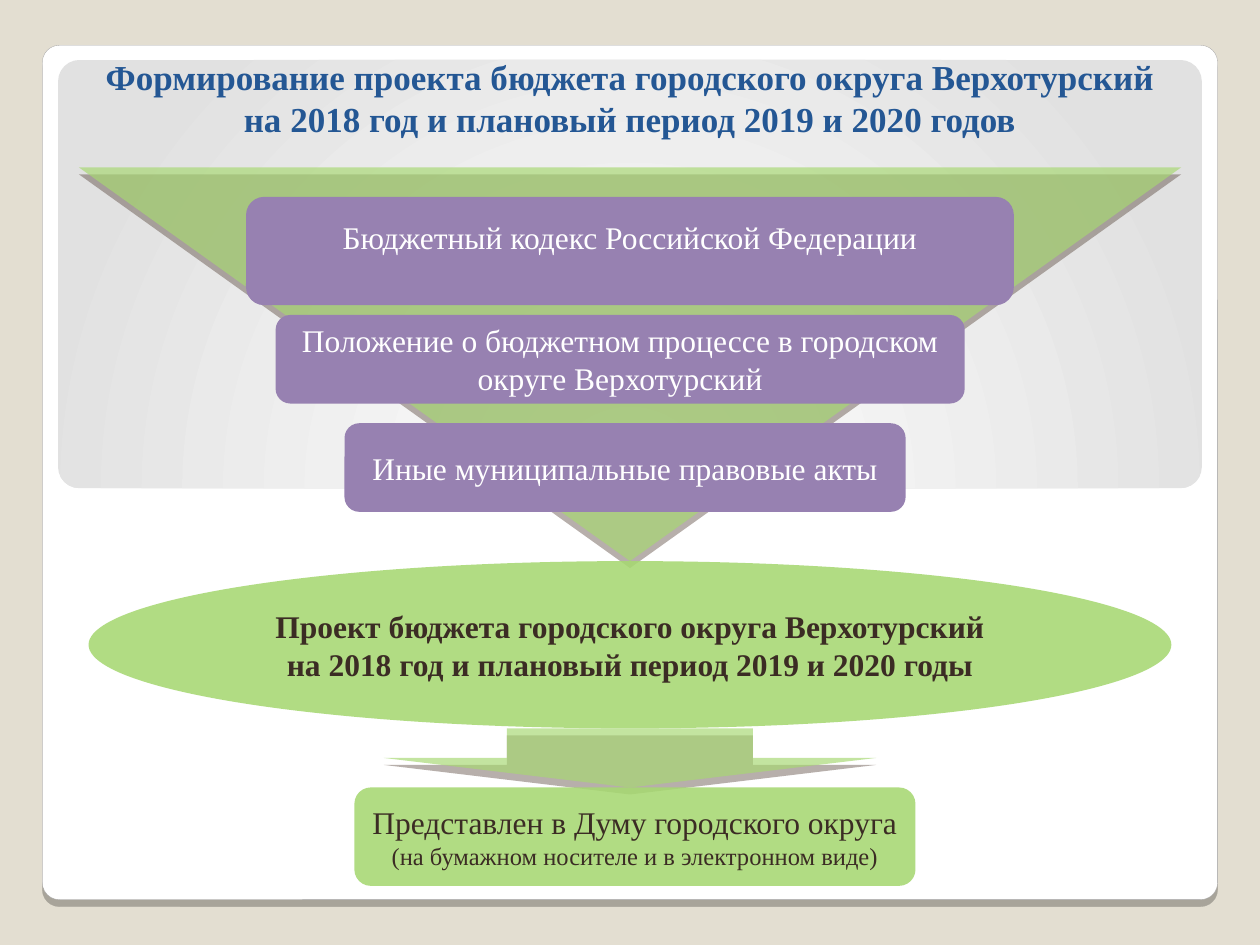
from typing import NamedTuple

from pptx import Presentation
from pptx.dml.color import RGBColor
from pptx.enum.shapes import MSO_SHAPE as Shape
from pptx.enum.text import MSO_ANCHOR as Anchor, PP_ALIGN as Align
from pptx.oxml import parse_xml
from pptx.oxml.ns import nsdecls, qn
from pptx.util import Inches, Pt

CELL = Inches(10) / 128
FONT = "Times New Roman"
GREEN, PURPLE, BROWN, BLUE, WHITE = "A7D872", "9781B1", "3B2C24", "245794", "FFFFFF"


class Box(NamedTuple):
    """Area on a grid of 128 columns by 96 rows."""
    left: float
    top: float
    width: float
    height: float

    def inside(self, left, top, width, height):
        """Return the box at an offset within this one."""
        return Box(self.left + left, self.top + top, width, height)

    def lengths(self):
        """Return the four lengths in slide units."""
        return [round(value * CELL) for value in self]


def colour(code):
    """Turn a hex string into a colour."""
    return RGBColor.from_string(code)


def add_shape(page, kind, box, fill=None, opacity=100, shadow=None, adjust=()):
    """Add a preset shape; shadow is a colour and its opacity."""
    shape = page.shapes.add_shape(kind, *box.lengths())
    shape.shadow.inherit = False
    shape.line.fill.background()
    for index, value in enumerate(adjust):
        shape.adjustments[index] = value
    properties = shape._element.spPr
    if fill:
        shape.fill.solid()
        shape.fill.fore_color.rgb = colour(fill)
        shade = properties.find(qn("a:solidFill"))[0]
        shade.append(parse_xml(f'<a:alpha {nsdecls("a")} val="{opacity * 1000}"/>'))
    if shadow:
        tint, strength = shadow
        properties.find(qn("a:effectLst")).append(parse_xml(
            f'<a:outerShdw {nsdecls("a")} blurRad="0" dist="{Pt(4)}" dir="5400000" '
            f'algn="tl" rotWithShape="0"><a:srgbClr val="{tint}">'
            f'<a:alpha val="{strength * 1000}"/></a:srgbClr></a:outerShdw>'))
    return shape


def write(shape, lines, sizes, code, bold=False, anchor=Anchor.MIDDLE):
    """Fill a shape with centred lines of text."""
    frame = shape.text_frame
    frame.word_wrap = True
    frame.vertical_anchor = anchor
    frame.margin_left = frame.margin_right = Inches(0.05)
    frame.text = "\n".join(lines)
    for para, size in zip(frame.paragraphs, sizes):
        para.alignment = Align.CENTER
        for span in para.runs:
            span.font.name, span.font.size, span.font.bold = FONT, Pt(size), bold
            span.font.color.rgb = colour(code)
    return frame


def add_backdrop(page, box):
    """Draw the white sheet and its shaded upper panel."""
    page.background.fill.solid()
    page.background.fill.fore_color.rgb = colour("E3DED1")
    sheet = add_shape(page, Shape.ROUNDED_RECTANGLE, box, WHITE,
                      shadow=("000000", 25), adjust=[0.02])
    sheet.line.color.rgb = colour("A4A3A3")
    sheet.line.width = Pt(0.16)
    panel = add_shape(page, Shape.ROUNDED_RECTANGLE,
                      box.inside(1.6, 1.5, box.width - 3.2, 43.5), adjust=[0.05])
    panel._element.spPr.find(qn("a:prstGeom")).addnext(parse_xml(
        f'<a:gradFill {nsdecls("a")} rotWithShape="1"><a:gsLst>'
        '<a:gs pos="0"><a:srgbClr val="FFFFFF"/></a:gs>'
        '<a:gs pos="100000"><a:srgbClr val="E1E1E1"/></a:gs></a:gsLst>'
        '<a:path path="circle"><a:fillToRect l="50000" t="175000" r="50000" b="-75000"/>'
        '</a:path></a:gradFill>'))


def add_funnel(page, box):
    """Draw the funnel and the legal acts stacked on it."""
    add_shape(page, Shape.FLOWCHART_MERGE, box, GREEN, 67, ("4E3B30", 60))
    acts = [
        ((17, 3, 78, 11), ["Бюджетный кодекс Российской Федерации"], 0.27),
        ((20, 15, 70, 9), ["Положение о бюджетном процессе в городском",
                           "округе Верхотурский"], 0.05),
        ((27, 26, 57, 9), ["Иные муниципальные правовые акты"], 0.05),
    ]
    for area, lines, bottom in acts:
        card = add_shape(page, Shape.ROUNDED_RECTANGLE, box.inside(*area), PURPLE)
        frame = write(card, lines, [18, 18], WHITE)
        frame.margin_bottom = Inches(bottom)


def add_result(page, box):
    """Draw the ellipse naming the draft budget."""
    add_shape(page, Shape.OVAL, box, GREEN, 88)
    area = box.inside(3, 0, box.width - 6, box.height)
    write(page.shapes.add_textbox(*area.lengths()),
          ["Проект бюджета городского округа Верхотурский",
           "на 2018 год и плановый период 2019 и 2020 годы"], [18, 18], BROWN, True)


def add_submission(page, box):
    """Draw the arrow and the card on submission to the Duma."""
    add_shape(page, Shape.DOWN_ARROW, box.inside(3, 0, 50, 6), GREEN, 67,
              ("4E3B30", 60), [0.5, 0.5])
    card = add_shape(page, Shape.ROUNDED_RECTANGLE,
                     box.inside(0, 6, box.width, 10), GREEN, 88)
    write(card, ["Представлен в Думу городского округа",
                 "(на бумажном носителе и в электронном виде)"], [18, 14], BROWN)


def add_title(page, box):
    """Write the two-line title."""
    write(page.shapes.add_textbox(*box.lengths()),
          ["Формирование проекта бюджета городского округа Верхотурский",
           "на 2018 год и плановый период 2019 и 2020 годов"],
          [20, 20], BLUE, True, Anchor.TOP)


def main():
    """Build and save the slide."""
    deck = Presentation()
    deck.slide_width, deck.slide_height = Inches(10), Inches(7.5)
    page = deck.slides.add_slide(deck.slide_layouts[6])
    add_backdrop(page, Box(4.3, 4.6, 119.4, 86.8))
    add_funnel(page, Box(8, 17, 112, 40))
    add_result(page, Box(9, 57, 110, 17))
    add_submission(page, Box(36, 74, 57, 16))
    add_title(page, Box(0, 5, 128, 10))
    deck.save("out.pptx")


if __name__ == "__main__":
    main()
